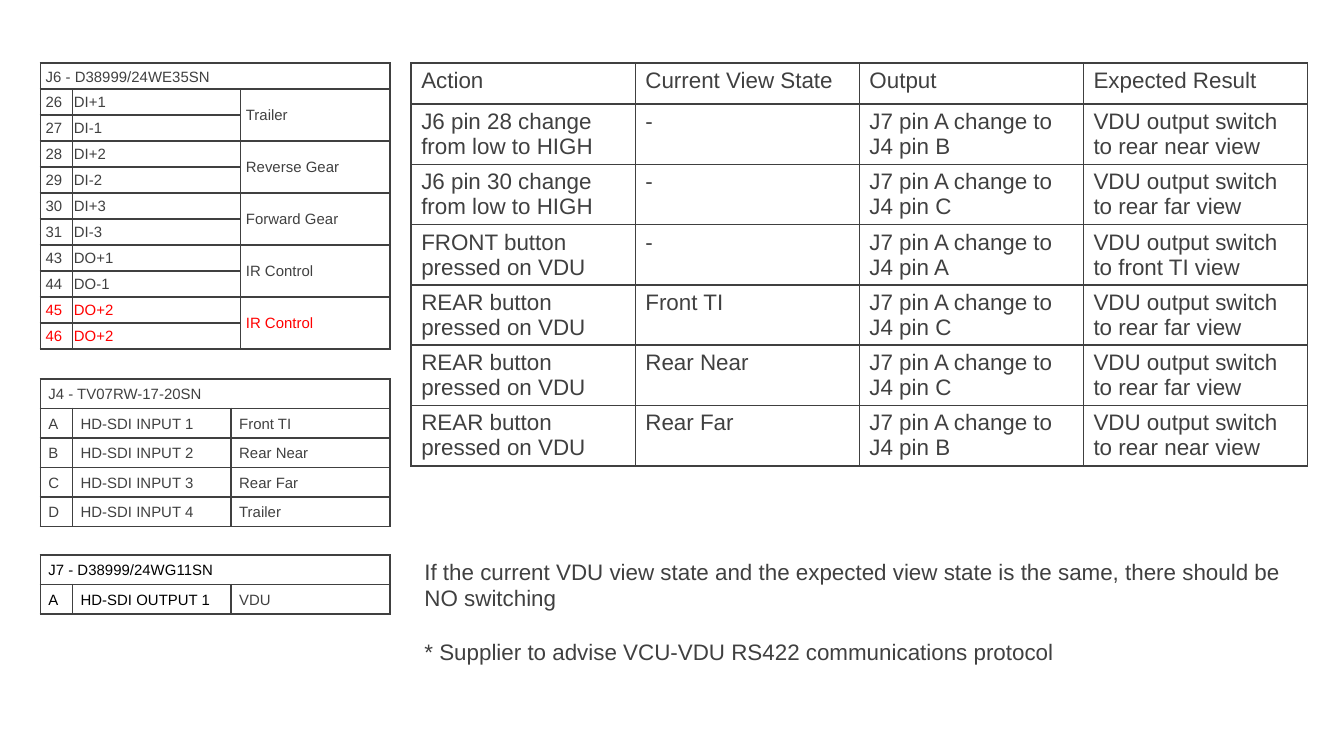
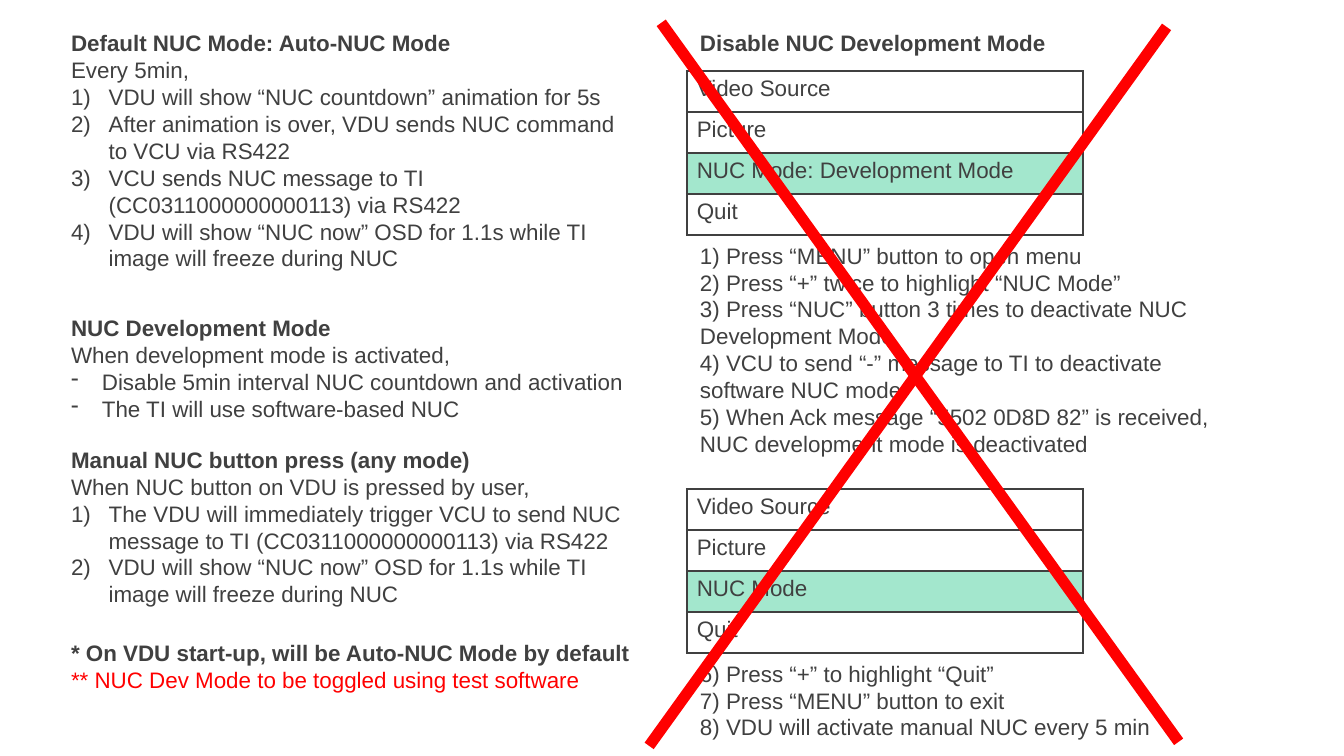
from dataclasses import dataclass

import pptx
import pptx.dml.color
import pptx.enum.shapes
import pptx.enum.text
import pptx.oxml.ns
import pptx.util
from lxml import etree

Inches = pptx.util.Inches
Pt = pptx.util.Pt


@dataclass(frozen=True)
class Theme:
    font: str = "Arial"
    text: str = "404040"
    black: str = "000000"
    alert: str = "FF0000"
    selected: str = "A3E7CD"
    small: int = 8
    body: int = 12
    pinout_spacing: float = 1.07
    border: int = 1
    cross: int = 6


THEME = Theme()
ROW_HEIGHT = 1.22 / 4

# Connector J6: function, its pins, text colour
J6_TITLE = "J6 - D38999/24WE35SN"
J6_SIGNALS = [
    ("Trailer", [("26", "DI+1"), ("27", "DI-1")], THEME.text),
    ("Reverse Gear", [("28", "DI+2"), ("29", "DI-2")], THEME.text),
    ("Forward Gear", [("30", "DI+3"), ("31", "DI-3")], THEME.text),
    ("IR Control", [("43", "DO+1"), ("44", "DO-1")], THEME.text),
    ("IR Control", [("45", "DO+2"), ("46", "DO+2")], THEME.alert),
]
J4_ROWS = [
    ("J4 - TV07RW-17-20SN", "", ""),
    ("A", "HD-SDI INPUT 1", "Front TI"),
    ("B", "HD-SDI INPUT 2", "Rear Near"),
    ("C", "HD-SDI INPUT 3", "Rear Far"),
    ("D", "HD-SDI INPUT 4", "Trailer"),
]
J7_ROWS = [
    ("J7 - D38999/24WG11SN", "", ""),
    ("A", "HD-SDI OUTPUT 1", "VDU"),
]
ACTION_ROWS = [
    ("Action", "Current View State", "Output", "Expected Result"),
    ("J6 pin 28 change from low to HIGH", "-", "J7 pin A change to J4 pin B",
     "VDU output switch to rear near view"),
    ("J6 pin 30 change from low to HIGH", "-", "J7 pin A change to J4 pin C",
     "VDU output switch to rear far view"),
    ("FRONT button pressed on VDU", "-", "J7 pin A change to J4 pin A",
     "VDU output switch to front TI view"),
    ("REAR button pressed on VDU", "Front TI", "J7 pin A change to J4 pin C",
     "VDU output switch to rear far view"),
    ("REAR button pressed on VDU", "Rear Near", "J7 pin A change to J4 pin C",
     "VDU output switch to rear far view"),
    ("REAR button pressed on VDU", "Rear Far", "J7 pin A change to J4 pin B",
     "VDU output switch to rear near view"),
]

# Text blocks: box, then (style, text) for each paragraph
SWITCHING_NOTES = ((3.06, 4.1, 6.67, 0.91), [
    ("plain", "If the current VDU view state and the expected view state is the same, "
              "there should be NO switching"),
    ("spaced", "* Supplier to advise VCU-VDU RS422 communications protocol"),
])
NUC_BLOCKS = [
    ((0.43, 0.17, 4.41, 1.92), [
        ("bold", "Default NUC Mode: Auto-NUC Mode"),
        ("plain", "Every 5min,"),
        ("number", "VDU will show “NUC countdown” animation for 5s"),
        ("number", "After animation is over, VDU sends NUC command to VCU via RS422"),
        ("number", "VCU sends NUC message to TI (CC0311000000000113) via RS422"),
        ("number", "VDU will show “NUC now” OSD for 1.1s while TI image will freeze during NUC"),
    ]),
    ((0.43, 2.29, 4.41, 0.91), [
        ("bold", "NUC Development Mode"),
        ("plain", "When development mode is activated,"),
        ("dash", "Disable 5min interval NUC countdown and activation"),
        ("dash", "The TI will use software-based NUC"),
    ]),
    ((0.43, 3.27, 4.41, 1.31), [
        ("bold", "Manual NUC button press (any mode)"),
        ("plain", "When NUC button on VDU is pressed by user,"),
        ("number", "The VDU will immediately trigger VCU to send NUC message to TI "
                   "(CC0311000000000113) via RS422"),
        ("number", "VDU will show “NUC now” OSD for 1.1s while TI image will freeze during NUC"),
    ]),
    ((0.43, 4.71, 4.41, 0.5), [
        ("bold", "* On VDU start-up, will be Auto-NUC Mode by default"),
        ("alert", "** NUC Dev Mode to be toggled using test software"),
    ]),
    ((5.11, 0.17, 2.95, 0.3), [("bold", "Disable NUC Development Mode")]),
    ((5.11, 1.75, 4.31, 1.72), [
        ("plain", "1) Press “MENU” button to open menu"),
        ("plain", "2) Press “+” twice to highlight “NUC Mode”"),
        ("plain", "3) Press “NUC” button 3 times to deactivate NUC Development Mode"),
        ("plain", "4) VCU to send “-” message to TI to deactivate software NUC mode"),
        ("plain", "5) When Ack message “5502 0D8D 82” is received, "
                  "NUC development mode is deactivated"),
    ]),
    ((5.11, 4.86, 4.45, 0.71), [
        ("plain", "6) Press “+” to highlight “Quit”"),
        ("plain", "7) Press “MENU” button to exit"),
        ("plain", "8) VDU will activate manual NUC every 5 min"),
    ]),
]
# On-screen menus: top and the wording of the highlighted entry
MENUS = [(0.53, "NUC Mode: Development Mode"), (3.64, "NUC Mode")]
CROSS_LINES = [(4.92, 0.17, 8.77, 5.52), (8.68, 0.2, 4.83, 5.55)]

# Bullet element, its attributes, hanging indent
BULLETS = {
    "number": ("a:buAutoNum", {"type": "arabicParenR"}, 0.28),
    "dash": ("a:buChar", {"char": "-"}, 0.23),
}


def rgb(color):
    return pptx.dml.color.RGBColor.from_string(color)


def add_child(parent, tag, **attrs):
    return etree.SubElement(parent, pptx.oxml.ns.qn(tag), attrs)


def format_run(p, size, color, bold=False):
    for r in p.runs:
        r.font.name = THEME.font
        r.font.size = Pt(size)
        r.font.bold = bold
        r.font.color.rgb = rgb(color)


def add_text(s, box, paragraphs):
    shape = s.shapes.add_textbox(*map(Inches, box))
    tf = shape.text_frame
    tf.word_wrap = True
    tf.auto_size = pptx.enum.text.MSO_AUTO_SIZE.SHAPE_TO_FIT_TEXT
    for i, (style, text) in enumerate(paragraphs):
        p = tf.add_paragraph() if i else tf.paragraphs[0]
        p.text = text
        if style == "spaced":
            p.space_before = Pt(14.4)
        if style in BULLETS:
            tag, attrs, indent = BULLETS[style]
            pPr = p._p.get_or_add_pPr()
            pPr.set("marL", str(Inches(indent)))
            pPr.set("indent", str(-Inches(indent)))
            add_child(pPr, tag, **attrs)
        color = THEME.alert if style == "alert" else THEME.text
        format_run(p, THEME.body, color, style == "bold")


def add_borders(cell):
    tcPr = cell._tc.get_or_add_tcPr()
    for side in ("a:lnL", "a:lnR", "a:lnT", "a:lnB"):
        ln = add_child(tcPr, side, w=str(Pt(THEME.border)))
        add_child(add_child(ln, "a:solidFill"), "a:srgbClr", val=THEME.text)


def set_margins(cell, x, y):
    cell.margin_left = cell.margin_right = x
    cell.margin_top = cell.margin_bottom = y


def add_grid(s, left, top, cols, heights, rows, size=THEME.body, color=THEME.text):
    """Bordered table without fills; returns the table for further formatting."""
    frame = s.shapes.add_table(len(rows), len(cols), Inches(left), Inches(top),
                               Inches(sum(cols)), Inches(sum(heights)))
    table = frame.table
    table.first_row = table.horz_banding = False
    for column, width in zip(table.columns, cols):
        column.width = Inches(width)
    for row, height, texts in zip(table.rows, heights, rows):
        row.height = Inches(height)
        for cell, text in zip(row.cells, texts):
            cell.text = text
            format_run(cell.text_frame.paragraphs[0], size, color)
            set_margins(cell, Pt(5.4), Pt(2.7))
            add_borders(cell)
            cell.fill.background()
    return table


def add_pinout(s, top, cols, height, rows, margin, color=THEME.text):
    """Compact connector table whose first row is a title across all columns."""
    heights = [height / len(rows)] * len(rows)
    table = add_grid(s, 0.3, top, cols, heights, rows, THEME.small, color)
    for cell in table.iter_cells():
        cell.vertical_anchor = pptx.enum.text.MSO_ANCHOR.MIDDLE
        set_margins(cell, Inches(margin), 0)
        cell.text_frame.paragraphs[0].line_spacing = THEME.pinout_spacing
    table.cell(0, 0).merge(table.cell(0, len(cols) - 1))
    return table


def add_j6(s):
    rows = [(J6_TITLE, "", "")]
    for function, pins, _ in J6_SIGNALS:
        for i, (pin, signal) in enumerate(pins):
            rows.append((pin, signal, "" if i else function))
    table = add_pinout(s, 0.47, [0.24, 1.25, 1.11], 2.13, rows, 0.04)
    first = 1
    for _, pins, color in J6_SIGNALS:
        last = first + len(pins) - 1
        for row in range(first, last + 1):
            set_margins(table.cell(row, 1), Inches(0.01), 0)
            for col in range(3):
                format_run(table.cell(row, col).text_frame.paragraphs[0], THEME.small, color)
        table.cell(first, 2).merge(table.cell(last, 2))
        first = last + 1


def build_switching_slide(s):
    add_j6(s)
    video_cols = [0.24, 1.18, 1.18]
    add_pinout(s, 2.82, video_cols, 1.1, J4_ROWS, 0.06)
    j7 = add_pinout(s, 4.13, video_cols, 0.44, J7_ROWS, 0.06, THEME.black)
    format_run(j7.cell(1, 2).text_frame.paragraphs[0], THEME.small, THEME.text)
    heights = [ROW_HEIGHT] + [0.41] * (len(ACTION_ROWS) - 1)
    add_grid(s, 3.06, 0.47, [6.67 / 4] * 4, heights, ACTION_ROWS)
    add_text(s, *SWITCHING_NOTES)


def build_nuc_slide(s):
    for box, paragraphs in NUC_BLOCKS:
        add_text(s, box, paragraphs)
    for top, highlighted in MENUS:
        entries = [("Video Source",), ("Picture",), (highlighted,), ("Quit",)]
        table = add_grid(s, 5.11, top, [2.95], [ROW_HEIGHT] * 4, entries)
        fill = table.cell(2, 0).fill
        fill.solid()
        fill.fore_color.rgb = rgb(THEME.selected)
    for ends in CROSS_LINES:
        line = s.shapes.add_connector(pptx.enum.shapes.MSO_CONNECTOR.STRAIGHT,
                                      *map(Inches, ends))
        line.line.color.rgb = rgb(THEME.alert)
        line.line.width = Pt(THEME.cross)
        add_child(line._element.spPr, "a:effectLst")


def main():
    prs = pptx.Presentation()
    prs.slide_width, prs.slide_height = Inches(10), Pt(405)
    blank = prs.slide_layouts[6]
    for build in (build_switching_slide, build_nuc_slide):
        build(prs.slides.add_slide(blank))
    prs.save("out.pptx")


if __name__ == "__main__":
    main()
